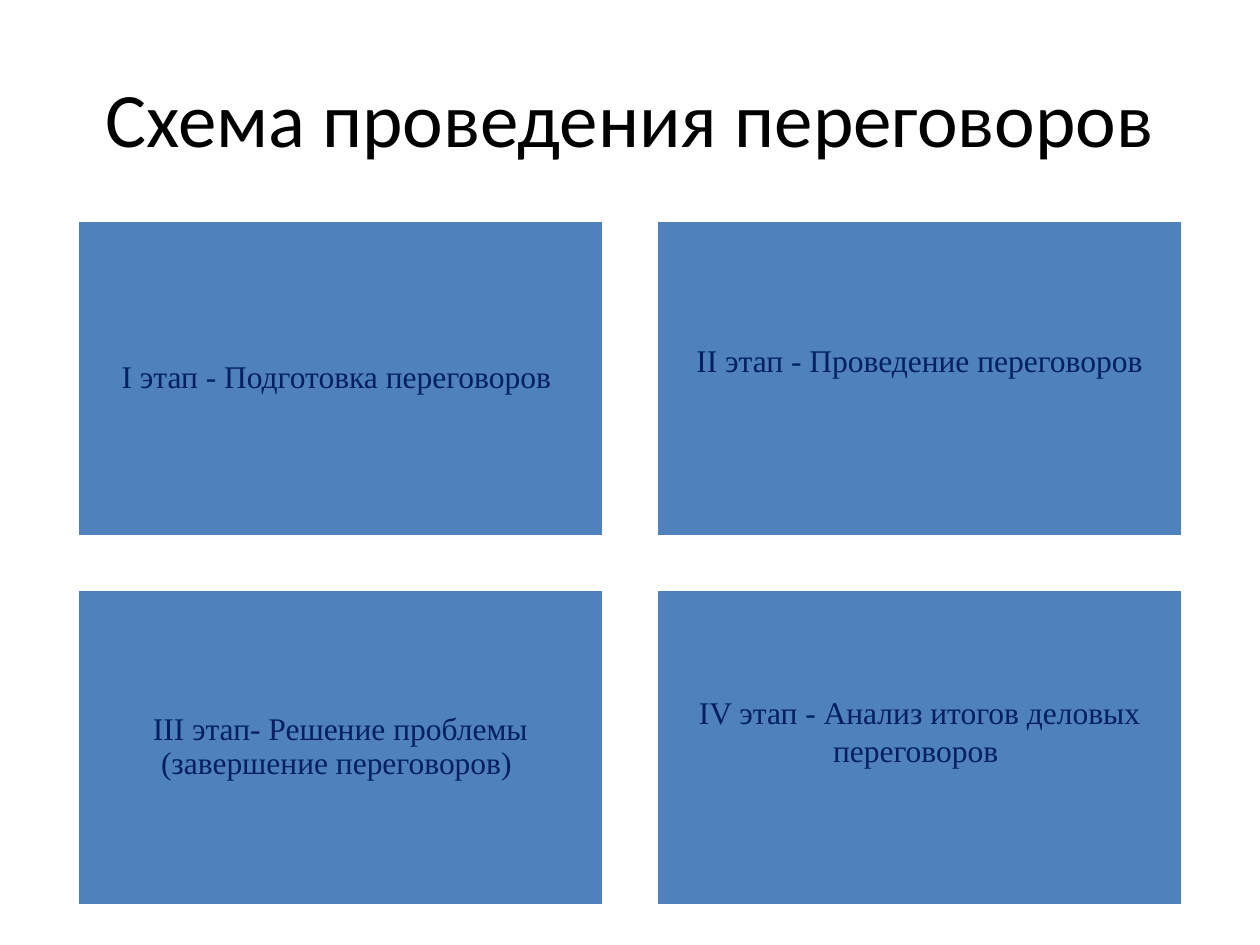
from pptx import Presentation
from pptx.dml.color import RGBColor
from pptx.enum.shapes import MSO_SHAPE
from pptx.enum.text import MSO_ANCHOR, PP_ALIGN
from pptx.util import Pt

RECTANGLE = MSO_SHAPE.RECTANGLE
MIDDLE = MSO_ANCHOR.MIDDLE
CENTER = PP_ALIGN.CENTER

COLORS = {"title": "000000", "card": "4F81BD", "border": "FFFFFF", "text": "002060"}
TITLE_FONT = {"name": "Calibri", "size": Pt(44)}
CARD_FONT = {"name": "Times New Roman", "size": Pt(18)}
INSET = 5
RAISED_INSET = 24
STAGES = [
    ("I этап - Подготовка переговоров ", 0.9, INSET),
    ("II этап - Проведение переговоров", 0.9, RAISED_INSET),
    ("III этап- Решение проблемы (завершение переговоров) ", 0.9, INSET),
    ("IV этап - Анализ итогов деловых переговоров ", 1.0, RAISED_INSET),
]


def color(name):
    return RGBColor.from_string(COLORS[name])


def set_attributes(target, values):
    for name, value in values.items():
        setattr(target, name, value)


def write_text(frame, text, font, color_name, line_spacing=1.0):
    set_attributes(frame, {"word_wrap": True, "vertical_anchor": MIDDLE})
    paragraph = frame.paragraphs[0]
    paragraph.text = text
    set_attributes(paragraph, {"alignment": CENTER, "line_spacing": line_spacing})
    set_attributes(paragraph.font, font)
    paragraph.font.color.rgb = color(color_name)


def add_title(slide, left, top, width, height):
    shape = slide.shapes.add_textbox(Pt(left), Pt(top), Pt(width), Pt(height))
    write_text(shape.text_frame, "Схема проведения переговоров", TITLE_FONT, "title")


def add_card(slide, left, top, width, height, stage):
    text, line_spacing, bottom_inset = stage
    shape = slide.shapes.add_shape(RECTANGLE, Pt(left), Pt(top), Pt(width), Pt(height))
    shape.shadow.inherit = False
    shape.fill.solid()
    shape.fill.fore_color.rgb = color("card")
    shape.line.color.rgb = color("border")
    shape.line.width = Pt(2)
    set_attributes(shape.text_frame, {
        "margin_left": Pt(INSET),
        "margin_right": Pt(INSET),
        "margin_top": Pt(INSET),
        "margin_bottom": Pt(bottom_inset),
    })
    write_text(shape.text_frame, text, CARD_FONT, "text", line_spacing)


def add_stage_grid(slide, left, top, width, height, gap=30, columns=2):
    rows = len(STAGES) // columns
    card_width = (width - gap * (columns - 1)) / columns
    card_height = (height - gap * (rows - 1)) / rows
    for index, stage in enumerate(STAGES):
        row, column = divmod(index, columns)
        add_card(
            slide,
            left + column * (card_width + gap),
            top + row * (card_height + gap),
            card_width,
            card_height,
            stage,
        )


def main():
    presentation = Presentation()
    presentation.slide_width = Pt(720)
    presentation.slide_height = Pt(540)
    slide = presentation.slides.add_slide(presentation.slide_layouts[6])
    add_title(slide, 36, 21.6, 648, 90)
    add_stage_grid(slide, 44, 126, 632, 391.5)
    presentation.save("out.pptx")


if __name__ == "__main__":
    main()
